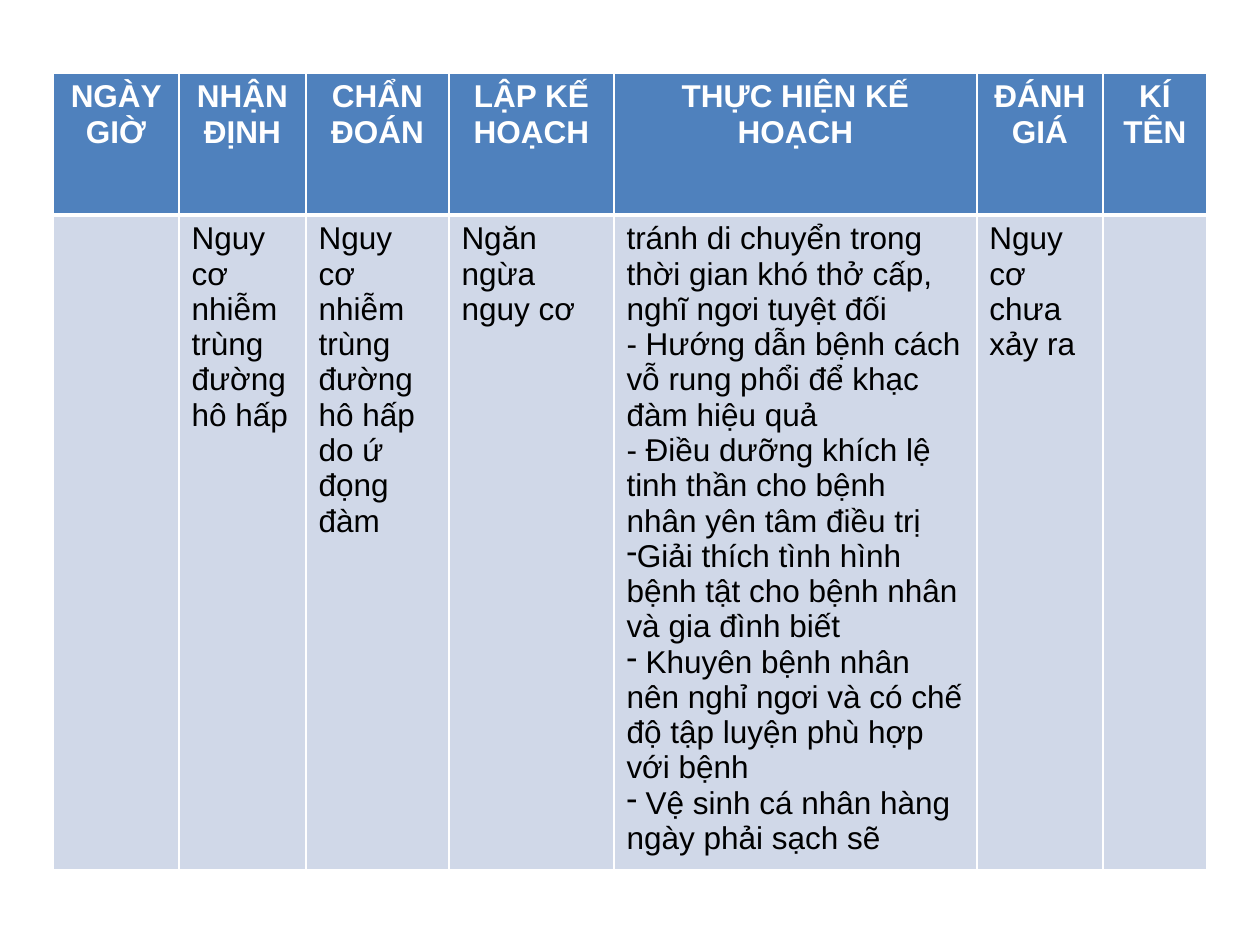
"""Build a slide with a nursing care plan table."""
from lxml.etree import SubElement
from pptx import Presentation
from pptx.dml.color import RGBColor as RGB
from pptx.enum.text import PP_ALIGN as Align
from pptx.oxml import parse_xml
from pptx.oxml.ns import nsdecls, qn
from pptx.util import Emu, Pt

COLORS = {"header": "4F81BD", "body": "D0D8E8", "border": "FFFFFF",
          "header_text": "FFFFFF", "body_text": "000000"}
FONT, SIZE = "Arial", 18
SLIDE = (1260, 945)
LEFT, TOP = 53, 73
COLUMNS = [126, 127, 143, 165, 363, 126, 104]
ROWS = [142, 655]
BULLET = "-"

HEADERS = ["NGÀY GIỜ", "NHẬN ĐỊNH", "CHẨN ĐOÁN", "LẬP KẾ HOẠCH",
           "THỰC HIỆN KẾ HOẠCH", "ĐÁNH GIÁ", "KÍ TÊN"]
ACTIONS = [
    ("", "tránh di chuyển trong thời gian khó thở cấp, nghĩ ngơi tuyệt đối"),
    ("", "- Hướng dẫn bệnh cách vỗ rung phổi để khạc đàm hiệu quả"),
    ("", "- Điều dưỡng khích lệ tinh thần cho bệnh nhân yên tâm điều trị"),
    (BULLET, "Giải thích tình hình bệnh tật cho bệnh nhân và gia đình biết"),
    (BULLET, " Khuyên bệnh nhân nên nghỉ ngơi và có chế độ tập luyện phù hợp với bệnh"),
    (BULLET, " Vệ sinh cá nhân hàng ngày phải sạch sẽ"),
]
BODY = [
    [],
    [("", "Nguy cơ nhiễm trùng đường hô hấp")],
    [("", "Nguy cơ nhiễm trùng đường hô hấp do ứ đọng đàm")],
    [("", "Ngăn ngừa nguy cơ")],
    ACTIONS,
    [("", "Nguy cơ chưa xảy ra")],
    [],
]
CELLS = [[[("", title)] for title in HEADERS], BODY]


def px(n):
    return Emu(round(n * 914400 / 126))


def set_borders(cell, widths):
    tcPr = cell._tc.get_or_add_tcPr()
    for i, (side, width) in enumerate(widths.items()):
        tcPr.insert(i, parse_xml(
            f'<a:ln{side} {nsdecls("a")} w="{Pt(width)}"><a:solidFill>'
            f'<a:srgbClr val="{COLORS["border"]}"/></a:solidFill></a:ln{side}>'))


def fill_cell(cell, paragraphs, kind):
    cell.fill.solid()
    cell.fill.fore_color.rgb = RGB.from_string(COLORS[kind])
    header = kind == "header"
    set_borders(cell, {"L": 1, "R": 1, "T": 1 if header else 3, "B": 3 if header else 1})
    tf = cell.text_frame
    for i, (bullet, text) in enumerate(paragraphs):
        p = tf.add_paragraph() if i else tf.paragraphs[0]
        p.alignment = Align.CENTER if header else Align.LEFT
        if bullet:
            SubElement(p._p.get_or_add_pPr(), qn("a:buChar"), char=bullet)
        r = p.add_run()
        r.text = text
        r.font.name, r.font.size, r.font.bold = FONT, Pt(SIZE), header
        r.font.color.rgb = RGB.from_string(COLORS[kind + "_text"])


def main():
    prs = Presentation()
    prs.slide_width, prs.slide_height = map(px, SLIDE)
    s = prs.slides.add_slide(prs.slide_layouts[6])
    table = s.shapes.add_table(len(ROWS), len(COLUMNS), px(LEFT), px(TOP),
                               px(sum(COLUMNS)), px(sum(ROWS))).table
    for column, width in zip(table.columns, COLUMNS):
        column.width = px(width)
    for row, height, contents, kind in zip(table.rows, ROWS, CELLS, ("header", "body")):
        row.height = px(height)
        for cell, paragraphs in zip(row.cells, contents):
            fill_cell(cell, paragraphs, kind)
    prs.save("out.pptx")


if __name__ == "__main__":
    main()
